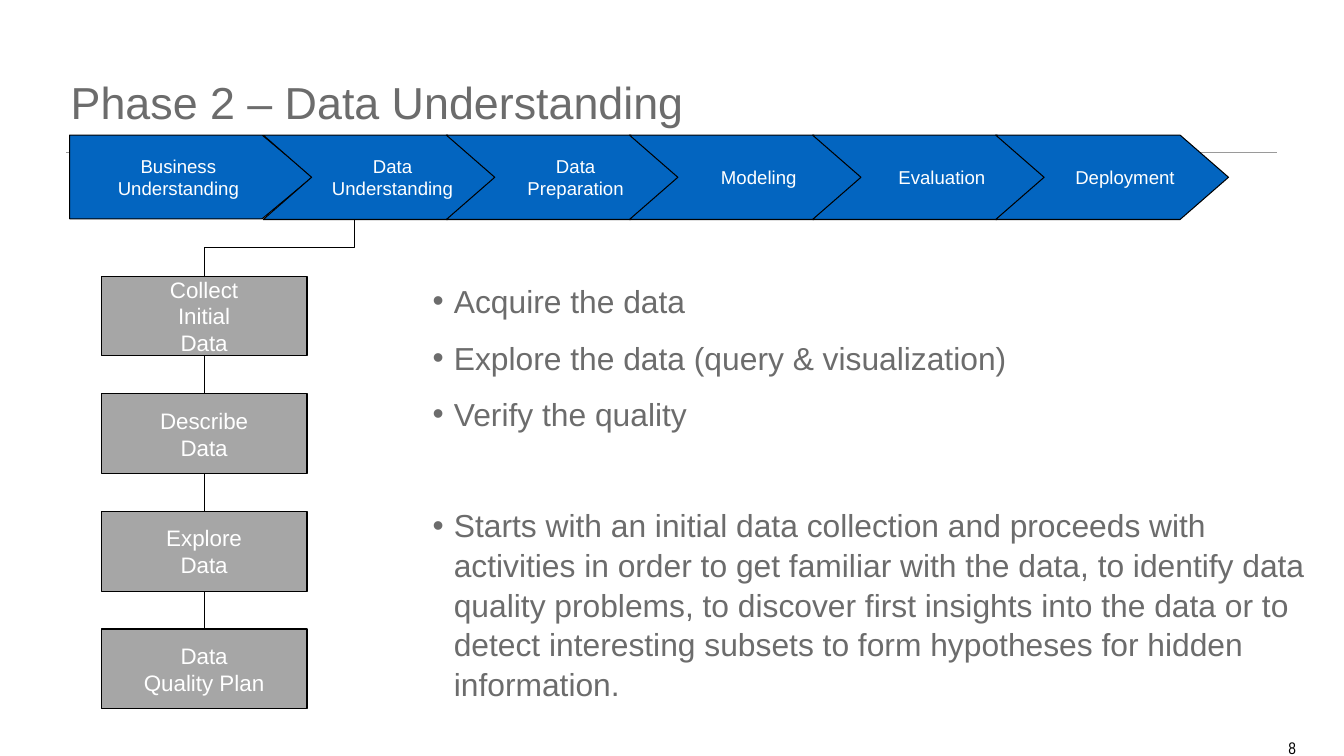
from lxml import etree
from pptx import Presentation
from pptx import util as u
from pptx.dml.color import RGBColor
from pptx.enum import shapes, text
from pptx.oxml.ns import qn

Pt = u.Pt
BLUE = RGBColor(0x03, 0x65, 0xC0)
GRAY = RGBColor(0xA6, 0xA6, 0xA6)
INK = RGBColor(0x6C, 0x6C, 0x6C)
RULE = RGBColor(0x9A, 0x9A, 0x9A)
BLACK = RGBColor(0, 0, 0)
WHITE = RGBColor(255, 255, 255)

TITLE = "Phase 2 – Data Understanding"
PHASES = ["Business\nUnderstanding", "Data\nUnderstanding", "Data\nPreparation",
          "Modeling", "Evaluation", "Deployment"]
TASKS = ["Collect\nInitial\nData", "Describe\nData", "Explore\nData",
         "Data\nQuality Plan"]
# (text, space before)
POINTS = [
    ("Acquire the data", 12),
    ("Explore the data (query & visualization)", 12),
    ("Verify the quality", 12),
    ("Starts with an initial data collection and proceeds with activities in "
     "order to get familiar with the data, to identify data quality problems, "
     "to discover first insights into the data or to detect interesting "
     "subsets to form hypotheses for hidden information.", 51.2),
]
PAGE = "8"

KIND = shapes.MSO_SHAPE
LINK = shapes.MSO_CONNECTOR
ALIGN = text.PP_ALIGN
ANCHOR = text.MSO_ANCHOR

# left, top, width, height
HEAD = (47.5, 18, 869.8, 77)
BODY = (306, 197.3, 635, 314.6)
FOOT = (911.5, 509, 17.3, 35.3)
FIRST = (49.7, 96.5, 173.5, 59.8)
CHEV = (188, 96.5, 166.3, 60.3)
CHEV_STEP = 130.8
TASK = (72.3, 197.3, 147, 56.9)
TASK_STEP = 84
STEM = 253.4


def put(item, **vals):
    for name, val in vals.items():
        setattr(item, name, val)


def place(shape, box):
    for name, val in zip(("left", "top", "width", "height"), box):
        setattr(shape, name, Pt(val))


def write(shape, lines, size, color, align, anchor, pads, wrap=True, font="Arial"):
    """Fill the text frame and return its paragraphs."""
    frame = shape.text_frame
    frame.text = lines
    put(frame, word_wrap=wrap, auto_size=text.MSO_AUTO_SIZE.NONE,
        vertical_anchor=anchor)
    for side, pad in zip(("left", "top", "right", "bottom"), pads):
        setattr(frame, "margin_" + side, Pt(pad))
    for para in frame.paragraphs:
        para.alignment = align
        for run in para.runs:
            put(run.font, size=Pt(size), name=font)
            run.font.color.rgb = color
    return frame.paragraphs


def block(slide, kind, box, fill, lines, size, left=8):
    shape = slide.shapes.add_shape(kind, *map(Pt, box))
    shape.shadow.inherit = False
    shape.fill.solid()
    shape.fill.fore_color.rgb = fill
    shape.line.color.rgb = BLACK
    shape.line.width = Pt(0.75)
    write(shape, lines, size, WHITE, ALIGN.CENTER, ANCHOR.MIDDLE,
          (left, 4, 8, 4), wrap=False)
    return shape


def link(slide, ends, kind=LINK.STRAIGHT, color=BLACK, width=0.75):
    line = slide.shapes.add_connector(kind, *map(Pt, ends))
    line.line.color.rgb = color
    line.line.width = Pt(width)
    etree.SubElement(line._element.spPr, qn("a:effectLst"))
    return line


def drop(slide, x1, y1, x2, y2):
    """Elbow that leaves downward: a flat elbow turned by 90 degrees."""
    wide, high = y2 - y1, x1 - x2
    mid_x, mid_y = (x1 + x2) / 2, (y1 + y2) / 2
    ends = (mid_x - wide / 2, mid_y - high / 2, mid_x + wide / 2, mid_y + high / 2)
    line = link(slide, ends, LINK.ELBOW)
    line._element.spPr.find(qn("a:xfrm")).set("rot", "5400000")


def main():
    deck = Presentation()
    put(deck, slide_width=Pt(960), slide_height=Pt(540))
    slide = deck.slides.add_slide(deck.slide_layouts[1])
    title, body = slide.placeholders
    pads = (3, 3, 3, 3)

    link(slide, (47.5, 108.9, 912.2, 108.9), color=RULE, width=1)
    place(title, HEAD)
    write(title, TITLE, 32, INK, ALIGN.LEFT, ANCHOR.BOTTOM, pads)

    place(body, BODY)
    lines = "\n".join(line for line, gap in POINTS)
    paras = write(body, lines, 22.7, INK, ALIGN.LEFT, ANCHOR.TOP, pads)
    for para, (line, gap) in zip(paras, POINTS):
        put(para, space_before=Pt(gap), line_spacing=1.04)
        prop = para._p.get_or_add_pPr()
        prop.set("marL", str(Pt(15.2)))
        prop.set("indent", str(Pt(-15.2)))

    page = slide.shapes.add_textbox(*map(Pt, FOOT))
    write(page, PAGE, 12, BLACK, ALIGN.RIGHT, ANCHOR.BOTTOM, pads,
          wrap=False, font="Arial Narrow")

    start = block(slide, KIND.PENTAGON, FIRST, BLUE, PHASES[0], 13.3)
    start.adjustments[0] = 0.601
    left, top, wide, high = CHEV
    for i, phase in enumerate(PHASES[1:]):
        box = (left + i * CHEV_STEP, top, wide, high)
        step = block(slide, KIND.CHEVRON, box, BLUE, phase, 13.3, left=26.5)
        step.adjustments[0] = 0.574

    x, y, wide, tall = TASK
    drop(slide, STEM, top + high, x + wide / 2, y)
    last = None
    for i, task in enumerate(TASKS):
        box = (x, y + i * TASK_STEP, wide, tall)
        node = block(slide, KIND.FLOWCHART_PROCESS, box, GRAY, task, 16)
        if last is not None:
            line = link(slide, (0, 0, 0, 0))
            line.begin_connect(last, 2)
            line.end_connect(node, 0)
        last = node

    deck.save("out.pptx")


if __name__ == "__main__":
    main()
